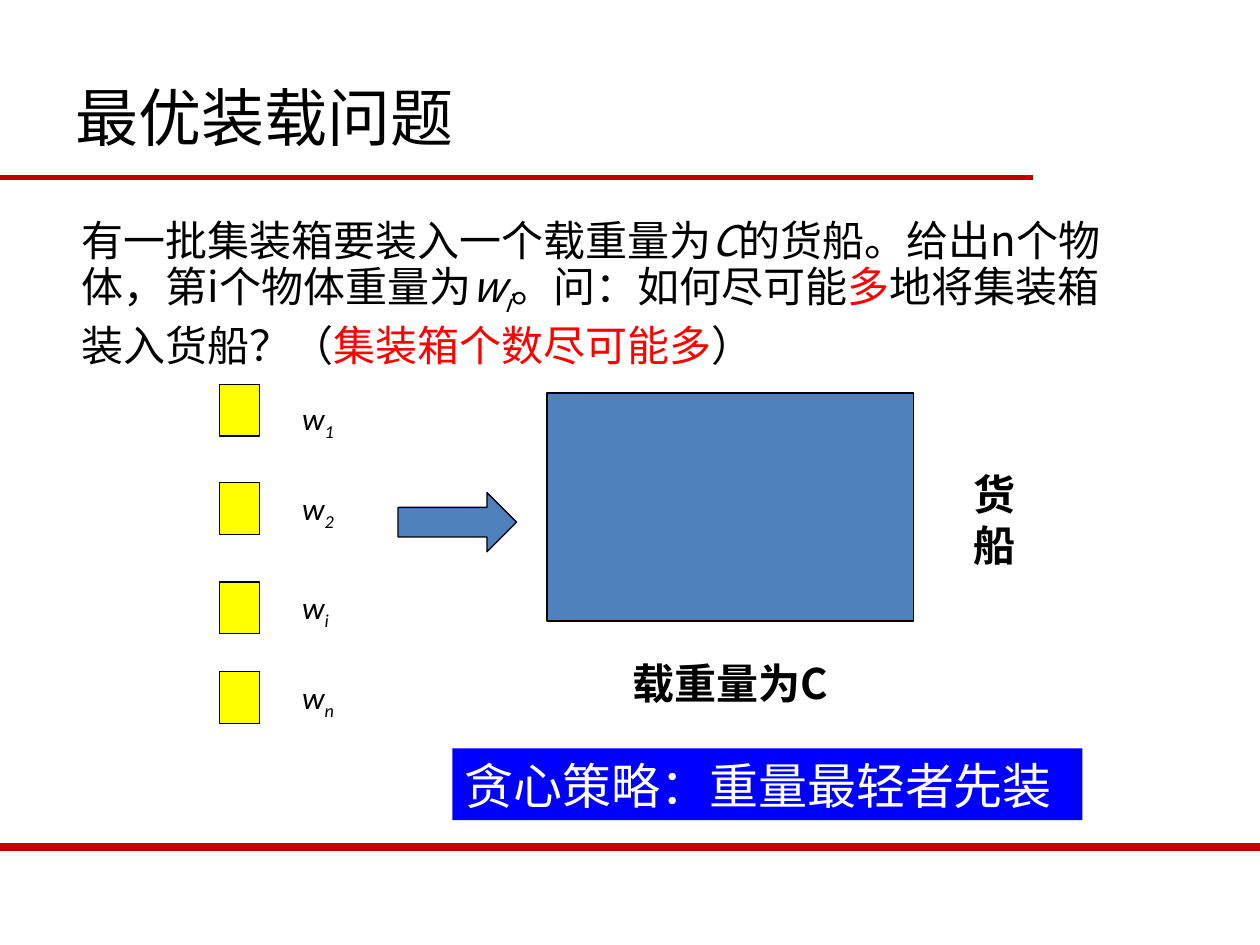
from lxml import etree
from pptx import Presentation
from pptx.dml.color import RGBColor
from pptx.enum.shapes import MSO_CONNECTOR, MSO_SHAPE
from pptx.enum.text import MSO_ANCHOR, PP_ALIGN
from pptx.oxml.ns import qn
from pptx.util import Inches, Pt

RECTANGLE, RIGHT_ARROW = MSO_SHAPE.RECTANGLE, MSO_SHAPE.RIGHT_ARROW
LEFT, CENTER = PP_ALIGN.LEFT, PP_ALIGN.CENTER
TOP, MIDDLE = MSO_ANCHOR.TOP, MSO_ANCHOR.MIDDLE
CHINESE, LATIN = "Noto Sans CJK SC", "Calibri"
COLORS = {"black": "000000", "white": "FFFFFF", "red": "FF0000", "rule": "C00000",
          "crate": "FFFF00", "ship": "4F81BD", "banner": "0000FF"}

# Content: each run is its text and the formatting that differs from plain
TITLE = [("最优装载问题", {})]
PROBLEM = [
    ("有一批集装箱要装入一个载重量为", {}),
    ("C", {"italic": True}),
    ("的货船。给出n个物体，第i个物体重量为", {}),
    ("w", {"italic": True}),
    ("i", {"italic": True, "subscript": True}),
    ("。问：如何尽可能", {}),
    ("多", {"color": "red"}),
    ("地将集装箱装入货船？（", {}),
    ("集装箱个数尽可能多", {"color": "red"}),
    ("）", {}),
]
SHIP = [("货船", {"bold": True})]
CAPACITY = [("载重量为C", {"bold": True})]
STRATEGY = [("贪心策略：重量最轻者先装", {"color": "white"})]
# Weight index, crate top, label top
CRATES = [("1", 3.05, 3.12), ("2", 3.83, 3.83), ("i", 4.62, 4.62), ("n", 5.33, 5.33)]
# Rule height, right end, line width
RULES = [(1.41, 8.2, 3), (6.72, 10, 4.5)]

presentation = Presentation()
presentation.slide_width, presentation.slide_height = Inches(10), Inches(7.5)
slide = presentation.slides.add_slide(presentation.slide_layouts[6])


def rgb(name):
    return RGBColor.from_string(COLORS[name])


def write(shape, runs, size, font=CHINESE, spacing=None, align=LEFT, anchor=TOP):
    frame = shape.text_frame
    frame.word_wrap = True
    frame.vertical_anchor = anchor
    paragraph = frame.paragraphs[0]
    paragraph.alignment = align
    if spacing:
        paragraph.line_spacing = Pt(spacing)
    for text, style in runs:
        run = paragraph.add_run()
        run.text = text
        run.font.name = font
        run.font.size = Pt(size)
        run.font.bold = style.get("bold", False)
        run.font.italic = style.get("italic", False)
        run.font.color.rgb = rgb(style.get("color", "black"))
        properties = run.font._element
        etree.SubElement(properties, qn("a:ea")).set("typeface", font)
        if style.get("subscript"):
            properties.set("baseline", "-25000")


def add_text(box, runs, size, **options):
    shape = slide.shapes.add_textbox(*map(Inches, box))
    write(shape, runs, size, **options)


def add_block(kind, box, fill, outlined=True):
    shape = slide.shapes.add_shape(kind, *map(Inches, box))
    shape.shadow.inherit = False
    shape.fill.solid()
    shape.fill.fore_color.rgb = rgb(fill)
    if outlined:
        shape.line.color.rgb = rgb("black")
        shape.line.width = Pt(0.75)
    else:
        shape.line.fill.background()
    return shape


# Red rules
for top, right, width in RULES:
    rule = slide.shapes.add_connector(
        MSO_CONNECTOR.STRAIGHT, 0, Inches(top), Inches(right), Inches(top))
    rule.line.color.rgb = rgb("rule")
    rule.line.width = Pt(width)
    etree.SubElement(rule._element.spPr, qn("a:effectLst"))

# Title and problem statement
add_text((0.5, 0.3, 9, 1.25), TITLE, 36, anchor=MIDDLE)
add_text((0.55, 1.64, 8.42, 1.43), PROBLEM, 24, spacing=30)

# Crates with their weights
for index, crate_top, label_top in CRATES:
    add_block(RECTANGLE, (1.74, crate_top, 0.32, 0.41), "crate")
    weight = [("w", {"italic": True}), (index, {"italic": True, "subscript": True})]
    add_text((2.3, label_top, 0.71, 0.4), weight, 18, font=LATIN)

# Ship, loading arrow and ship labels
add_block(RECTANGLE, (4.34, 3.12, 2.91, 1.81), "ship")
add_block(RIGHT_ARROW, (3.16, 3.91, 0.94, 0.47), "ship")
add_text((7.58, 3.67, 0.63, 0.91), SHIP, 24, spacing=29, align=CENTER)
add_text((4.5, 5.17, 2.6, 0.5), CAPACITY, 24, spacing=29, align=CENTER)

# Greedy strategy banner
banner = add_block(RECTANGLE, (3.59, 5.94, 5, 0.57), "banner", outlined=False)
write(banner, STRATEGY, 28, spacing=34)

presentation.save("out.pptx")
